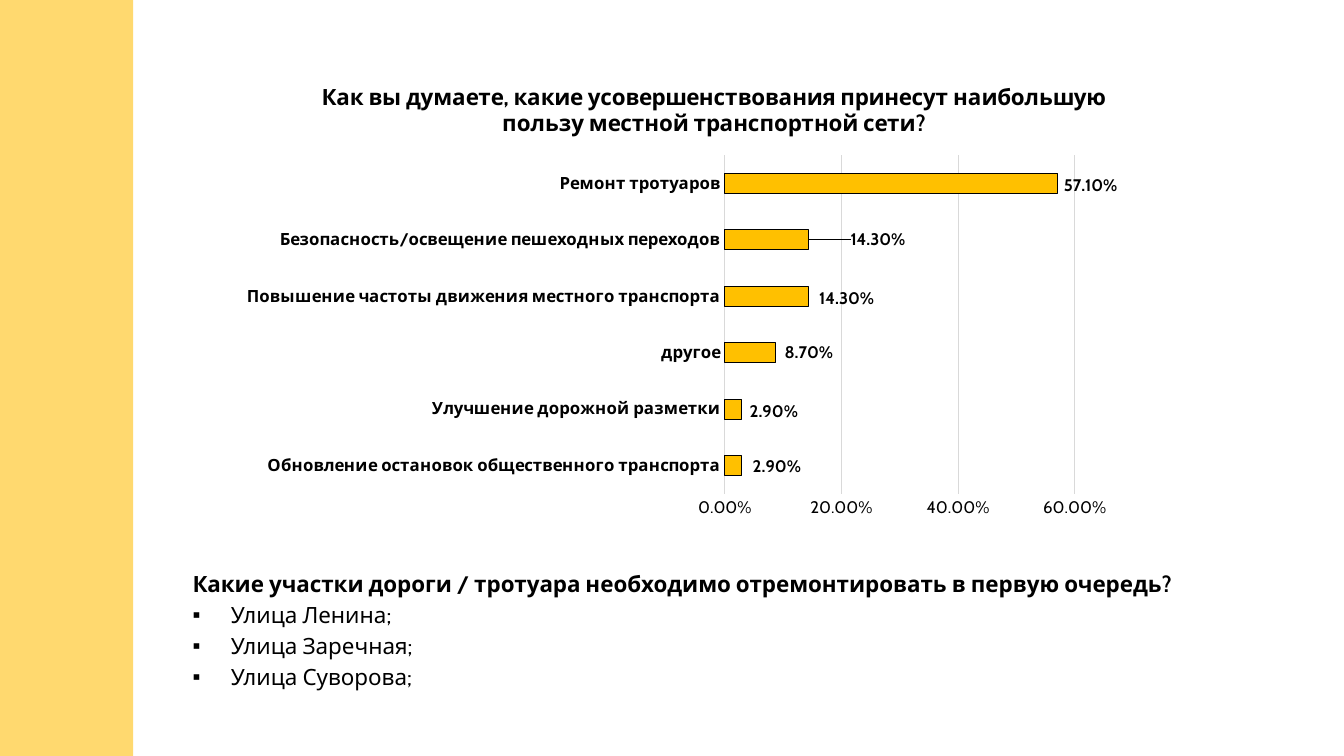
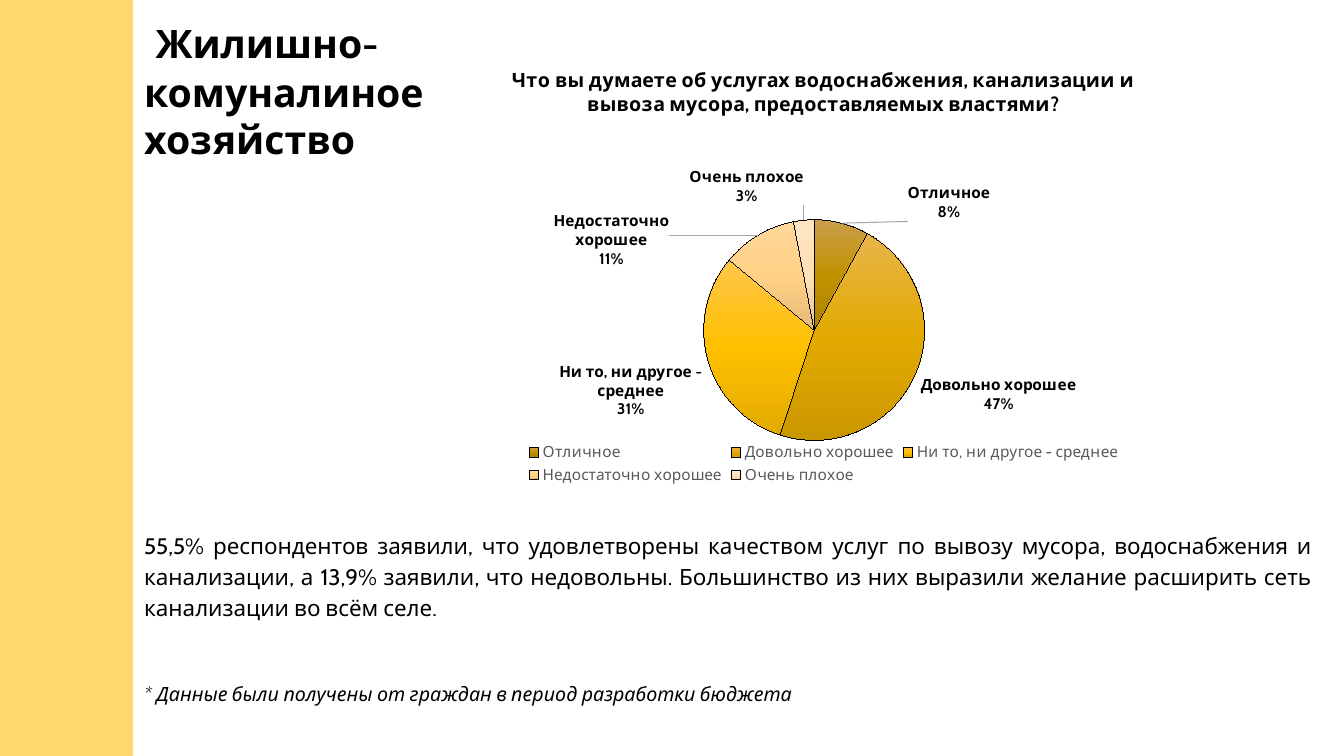
import copy
import pptx
import pptx.chart.data
import pptx.dml.color
import pptx.enum.chart
import pptx.enum.shapes
import pptx.enum.text
import pptx.oxml
import pptx.oxml.ns
import pptx.util
from dataclasses import dataclass

Inches, Pt = pptx.util.Inches, pptx.util.Pt
RGB = pptx.dml.color.RGBColor.from_string
Align = pptx.enum.text.PP_ALIGN
Kind = pptx.enum.chart.XL_CHART_TYPE
Tick = pptx.enum.chart.XL_TICK_MARK
Spot = pptx.enum.chart.XL_LABEL_POSITION


@dataclass(frozen=True)
class Theme:
    font: str = "Cabin"
    ink: str = "000000"
    grey: str = "595959"
    grid: str = "D9D9D9"
    lead: str = "A6A6A6"
    band: str = "FFD96F"
    bar: str = "FFC000"
    space: int = 36
    head: int = 28
    text: int = 16
    note: int = 14
    axis: int = 12
    label: int = 11


T = Theme()

# Content; plot, head and nudge are inches inside the chart box
ROADS = {
    "title": "Как вы думаете, какие усовершенствования принесут наибольшую "
             "пользу местной транспортной сети?",
    "box": (1.81, 0.62, 10.56, 4.79),
    "plot": (5.38, 0.92, 3.47, 3.36),
    "head": (1.34, 0.15),
    "data": [
        ("Обновление остановок общественного транспорта", 0.029),
        ("Улучшение дорожной разметки", 0.029),
        ("другое", 0.087),
        ("Повышение частоты движения местного транспорта", 0.143),
        ("Безопасность/освещение пешеходных переходов", 0.143),
        ("Ремонт тротуаров", 0.571),
    ],
    "nudge": {0: (0.07, 0.01), 1: (0.04, 0.02), 2: (0.05, 0),
              3: (0.07, 0.02), 4: (0.38, 0), 5: (0.02, 0.02)},
}
ASK = "Какие участки дороги / тротуара необходимо отремонтировать в первую очередь?"
STREETS = ["Улица Ленина;", "Улица Заречная;", "Улица Суворова;"]

WATER = {
    "title": "Что вы думаете об услугах водоснабжения, канализации и "
             "вывоза мусора, предоставляемых властями?",
    "box": (3.79, 0.49, 8.76, 4.36),
    "plot": (3.01, 1.69, 2.55, 2.19),
    "head": (1.25, 0.13),
    "data": [
        ("Отличное", 8),
        ("Довольно хорошее", 47),
        ("Ни то, ни другое - среднее", 31),
        ("Недостаточно хорошее", 11),
        ("Очень плохое", 3),
    ],
    "nudge": {0: (0.64, 0.04), 3: (-0.85, 0.38), 4: (0.01, -0.09)},
}
SHADES = [
    ("C99E4B", "C19200", "AC8100"),
    ("E8B44B", "E2AA00", "C99700"),
    ("FFC64B", "FFC000", "E3AB00"),
    ("FFD798", "FFD187", "E5BA75"),
    ("FFE5C3", "FFE0B6", "E5C79F"),
]
HEAD = "Жилишно-комуналиное хозяйство"
BODY = ("55,5% респондентов заявили, что удовлетворены качеством услуг по вывозу "
        "мусора, водоснабжения и канализации, а 13,9% заявили, что недовольны. "
        "Большинство из них выразили желание расширить сеть канализации во всём селе.")
NOTE = "* Данные были получены от граждан в период разработки бюджета"


# Text helpers
def style(font, size, bold=False, color=T.ink):
    font.name, font.size, font.bold = T.font, Pt(size), bold
    font.color.rgb = RGB(color)
    return font


def settle(shape, box):
    shape.left, shape.top, shape.width, shape.height = map(Inches, box)
    frame = shape.text_frame
    frame.word_wrap = True
    frame.auto_size = pptx.enum.text.MSO_AUTO_SIZE.NONE
    frame.vertical_anchor = pptx.enum.text.MSO_ANCHOR.TOP
    return frame


def write(para, text, size, bold=False, bullet=None, align=Align.LEFT, lines=1.0):
    props = para._p.get_or_add_pPr()
    indent = Inches(0.38) if bullet else 0
    props.set("marL", str(indent))
    props.set("indent", str(-indent))
    props.append(xml(f'a:buChar char="{bullet}"/>' if bullet else "a:buNone />"))
    para.text, para.alignment, para.line_spacing = text, align, lines
    para.space_before = para.space_after = Pt(0)
    return style(para.font, size, bold)


# Chart helpers
def xml(inner):
    tag, rest = inner.split(" ", 1)
    return pptx.oxml.parse_xml(f'<{tag} {pptx.oxml.ns.nsdecls("a", "c")} {rest}')


def place(node, index, info, spot, edge=True):
    for old in node.xpath("./c:layout"):
        node.remove(old)
    parts = '<c:layoutTarget val="inner"/>' if len(spot) == 4 else ""
    if edge:
        parts += '<c:xMode val="edge"/><c:yMode val="edge"/>'
    for key, val, full in zip("xywh", spot, info["box"][2:] * 2):
        parts += f'<c:{key} val="{val / full:.4f}"/>'
    node.insert(index, xml(
        f"c:layout ><c:manualLayout>{parts}</c:manualLayout></c:layout>"))


def add_chart(slide, kind, info, size, form):
    data = pptx.chart.data.CategoryChartData(number_format=form)
    names, vals = zip(*info["data"])
    data.categories = names
    data.add_series("Series 1", vals)
    chart = slide.shapes.add_chart(kind, *map(Inches, info["box"]), data).chart
    style(chart.font, 10)
    chart.has_title = True
    para = chart.chart_title.text_frame.paragraphs[0]
    para.text = info["title"]
    style(para.font, size, True)
    place(chart.element.xpath("./c:chart/c:title")[0], 1, info, info["head"])
    place(chart.element.xpath(".//c:plotArea")[0], 0, info, info["plot"])
    return chart


def outline(form, width):
    form.line.color.rgb = RGB(T.ink)
    form.line.width = Pt(width)


def lead(group, share):
    # Leader lines: thin grey ones on the pie, none on the bars
    for old in group.xpath("./c:showLeaderLines"):
        group.remove(old)
    if share:
        group.append(xml('c:showLeaderLines val="1"/>'))
        group.append(xml(
            'c:leaderLines ><c:spPr><a:ln w="9525"><a:solidFill>'
            f'<a:srgbClr val="{T.lead}"/></a:solidFill></a:ln></c:spPr></c:leaderLines>'))
    else:
        group.append(xml(
            'c:extLst ><c:ext uri="{CE6537A1-D6FC-4f65-9D91-7224C49458BB}" '
            'xmlns:c15="http://schemas.microsoft.com/office/drawing/2012/chart">'
            '<c15:showLeaderLines val="0"/></c:ext></c:extLst>'))


def label(chart, info, size, form, share=False):
    series = chart.plots[0].series[0]
    tags = series.data_labels
    tags.show_value = not share
    tags.show_percentage = tags.show_category_name = share
    tags.number_format, tags.number_format_is_linked = form, False
    tags.position = Spot.OUTSIDE_END
    style(tags.font, size, True)
    for index in info["nudge"]:
        tag = series.points[index].data_label
        style(tag.font, size, True)
        tag.position = Spot.OUTSIDE_END
    group = chart.element.xpath(".//c:ser/c:dLbls")[0]
    shows = ("c:showVal", "c:showCatName", "c:showPercent")
    for node, shift in zip(group.xpath("./c:dLbl"), info["nudge"].values()):
        place(node, 1, info, shift, edge=False)
        for show in shows:
            node.xpath(show)[0].set("val", str(int(group.xpath(show)[0].val)))
    if share:
        for last in group.xpath(".//c:showBubbleSize"):
            last.addnext(xml("c:separator >\n</c:separator>"))
    lead(group, share)


def bars(slide):
    chart = add_chart(slide, Kind.BAR_CLUSTERED, ROADS, T.text, "0.00%")
    chart.has_legend = False
    plot = chart.plots[0]
    plot.gap_width, plot.vary_by_categories = 182, False
    series = plot.series[0]
    series.invert_if_negative = False
    series.format.fill.solid()
    series.format.fill.fore_color.rgb = RGB(T.bar)
    outline(series.format, 0.75)
    label(chart, ROADS, T.axis, "0.00%")
    cat, val = chart.category_axis, chart.value_axis
    for axis, bold in ((cat, True), (val, False)):
        axis.major_tick_mark = axis.minor_tick_mark = Tick.NONE
        style(axis.tick_labels.font, T.axis, bold)
    val.minimum_scale, val.maximum_scale, val.major_unit = 0, 0.6, 0.2
    val.tick_labels.number_format = "0.00%"
    val.tick_labels.number_format_is_linked = False
    val.has_major_gridlines = True
    val.format.line.fill.background()
    for line in (cat.format.line, val.major_gridlines.format.line):
        line.color.rgb, line.width = RGB(T.grid), Pt(0.75)


def pie(slide):
    chart = add_chart(slide, Kind.PIE, WATER, T.note, "General")
    chart.has_legend = True
    chart.legend.position = pptx.enum.chart.XL_LEGEND_POSITION.BOTTOM
    chart.legend.include_in_layout = False
    style(chart.legend.font, T.label, color=T.grey)
    series = chart.plots[0].series[0]
    for index, shades in enumerate(SHADES):
        form = series.points[index].format
        form.fill.gradient()
        form.fill.gradient_angle = 270
        stops = chart.element.xpath(".//a:gsLst")[-1]
        stops.insert(1, copy.deepcopy(stops[0]))
        for step, (stop, shade) in enumerate(zip(form.fill.gradient_stops, shades)):
            stop.position, stop.color.rgb = step / 2, RGB(shade)
        outline(form, 0)
    label(chart, WATER, T.label, "0%", share=True)


# Slides
def roads(deck, layout):
    slide = deck.slides.add_slide(layout)
    title = slide.shapes.title.element
    title.getparent().remove(title)
    frame = settle(slide.placeholders[1], (1.81, 5.61, 10.19, 1.27))
    write(frame.paragraphs[0], ASK, T.text, True)
    for street in STREETS:
        write(frame.add_paragraph(), street, T.text, bullet="▪",
              align=Align.JUSTIFY, lines=1.15)
    bars(slide)
    return slide


def water(deck, layout):
    slide = deck.slides.add_slide(layout)
    para = settle(slide.shapes.title, (1.33, 0.03, 3.41, 1.65)).paragraphs[0]
    write(para, " ", T.head, True)
    para.runs[0].font.size = Pt(T.space)
    para.add_run().text = HEAD
    frame = settle(slide.placeholders[1], (1.33, 5.19, 11.79, 1.87))
    write(frame.paragraphs[0], BODY, T.text, align=Align.JUSTIFY, lines=1.15)
    note = frame.add_paragraph()
    write(note, NOTE, T.note).italic = True
    note.space_before = Pt(43.5)
    pie(slide)


def band(deck, slide):
    # Side band, moved to the master so that every slide shows it
    shape = slide.shapes.add_shape(pptx.enum.shapes.MSO_SHAPE.RECTANGLE, 0, 0,
                                   Inches(1.32), deck.slide_height)
    shape.shadow.inherit = False
    shape.fill.solid()
    shape.fill.fore_color.rgb = RGB(T.band)
    shape.line.fill.background()
    deck.slide_master.shapes.element.insert(2, shape.element)


def main():
    deck = pptx.Presentation()
    deck.slide_width, deck.slide_height = Inches(13.33), Inches(7.5)
    layout = deck.slide_layouts[1]
    band(deck, roads(deck, layout))
    water(deck, layout)
    deck.save("out.pptx")


if __name__ == "__main__":
    main()
